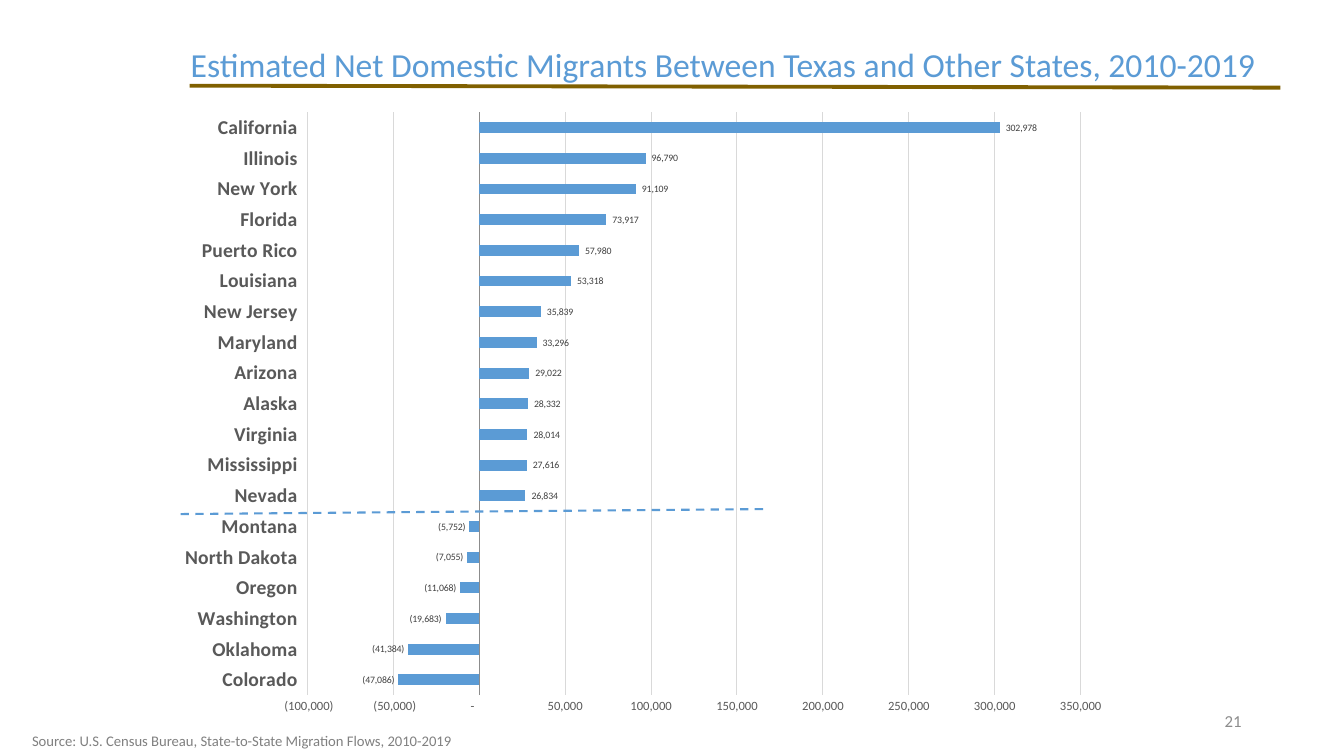
from lxml import etree
from pptx import Presentation
from pptx.chart.data import CategoryChartData
from pptx.dml.color import RGBColor
from pptx.enum.chart import (XL_CHART_TYPE, XL_LABEL_POSITION, XL_TICK_LABEL_POSITION,
                             XL_TICK_MARK)
from pptx.enum.dml import MSO_LINE
from pptx.enum.shapes import MSO_CONNECTOR
from pptx.enum.text import MSO_ANCHOR, MSO_AUTO_SIZE, PP_ALIGN
from pptx.oxml.ns import qn
from pptx.util import Pt

BAR = XL_CHART_TYPE.BAR_CLUSTERED
OUTSIDE_END = XL_LABEL_POSITION.OUTSIDE_END
LABELS_LOW = XL_TICK_LABEL_POSITION.LOW
NO_TICKS = XL_TICK_MARK.NONE
DASH = MSO_LINE.DASH
STRAIGHT = MSO_CONNECTOR.STRAIGHT
TOP, MIDDLE = MSO_ANCHOR.TOP, MSO_ANCHOR.MIDDLE
LEFT, RIGHT = PP_ALIGN.LEFT, PP_ALIGN.RIGHT

FONT = "Calibri"
COLORS = {
    "blue": "5B9BD5", "gold": "806000", "axis": "8C8C8C", "grid": "D9D9D9",
    "axis_text": "595959", "value_text": "404040", "source": "808080", "number": "8C8C8C",
}
NUMBER_FORMAT = '_(* #,##0_);_(* \\(#,##0\\);_(* "-"??_);_(@_)'
TITLE_ONLY = 5
# Inner plot area as shares of the chart frame
PLOT_LAYOUT = {"x": 0.147, "y": 0.02, "w": 0.81, "h": 0.93}
NET_MIGRANTS = {
    "Colorado": -47086, "Oklahoma": -41384, "Washington": -19683, "Oregon": -11068,
    "North Dakota": -7055, "Montana": -5752, "Nevada": 26834, "Mississippi": 27616,
    "Virginia": 28014, "Alaska": 28332, "Arizona": 29022, "Maryland": 33296,
    "New Jersey": 35839, "Louisiana": 53318, "Puerto Rico": 57980, "Florida": 73917,
    "New York": 91109, "Illinois": 96790, "California": 302978,
}


def rgb(name):
    return RGBColor.from_string(COLORS[name])


def style_font(font, size, color, bold=False):
    font.name = FONT
    font.size = Pt(size)
    font.bold = bold
    font.color.rgb = rgb(color)


def style_line(line, color, width):
    line.color.rgb = rgb(color)
    line.width = Pt(width)


def write_text(shape, text, size, color, align=LEFT, anchor=TOP):
    frame = shape.text_frame
    frame.word_wrap = True
    frame.auto_size = MSO_AUTO_SIZE.NONE
    frame.vertical_anchor = anchor
    paragraph = frame.paragraphs[0]
    paragraph.alignment = align
    run = paragraph.add_run()
    run.text = text
    style_font(run.font, size, color)
    return paragraph


def add_title(slide, text):
    title = slide.shapes.title
    title.left, title.top, title.width, title.height = Pt(129), Pt(30), Pt(780.5), Pt(35.5)
    write_text(title, text, 24, "blue", anchor=MIDDLE).line_spacing = 0.9


def add_text(slide, frame, *text_style, **options):
    box = slide.shapes.add_textbox(*map(Pt, frame))
    write_text(box, *text_style, **options)


def add_line(slide, start, end, color, width, dash=None):
    line = slide.shapes.add_connector(STRAIGHT, *map(Pt, start + end))
    style_line(line.line, color, width)
    if dash is not None:
        line.line.dash_style = dash
    etree.SubElement(line._element.spPr, qn("a:effectLst"))


def set_plot_layout(chart):
    """Fix the inner plot area, which python-pptx leaves automatic."""
    plot_area = chart._chartSpace.chart.plotArea
    layout = plot_area.find(qn("c:layout"))
    if layout is None:
        layout = etree.Element(qn("c:layout"))
        plot_area.insert(0, layout)
    manual = etree.SubElement(layout, qn("c:manualLayout"))
    settings = {"layoutTarget": "inner", "xMode": "edge", "yMode": "edge", **PLOT_LAYOUT}
    for tag, value in settings.items():
        etree.SubElement(manual, qn(f"c:{tag}")).set("val", str(value))


def style_axes(chart):
    states = chart.category_axis
    states.tick_label_position = LABELS_LOW
    states.major_tick_mark = NO_TICKS
    states.has_major_gridlines = False
    style_font(states.tick_labels.font, 14, "axis_text", bold=True)
    style_line(states.format.line, "axis", 0.75)

    migrants = chart.value_axis
    migrants.minimum_scale, migrants.maximum_scale = -100000, 350000
    migrants.major_unit = 50000
    migrants.major_tick_mark = NO_TICKS
    migrants.tick_labels.number_format = NUMBER_FORMAT
    migrants.tick_labels.number_format_is_linked = False
    style_font(migrants.tick_labels.font, 9, "axis_text")
    migrants.format.line.fill.background()
    style_line(migrants.major_gridlines.format.line, "grid", 0.75)


def style_bars(plot):
    plot.gap_width = 182
    plot.vary_by_categories = False
    series = plot.series[0]
    series.invert_if_negative = False
    series.format.fill.solid()
    series.format.fill.fore_color.rgb = rgb("blue")
    labels = series.data_labels
    labels.show_value = True
    labels.position = OUTSIDE_END
    labels.number_format = NUMBER_FORMAT
    labels.number_format_is_linked = False
    style_font(labels.font, 7, "value_text")


def add_migration_chart(slide):
    data = CategoryChartData(number_format=NUMBER_FORMAT)
    data.categories = list(NET_MIGRANTS)
    data.add_series("Series 1", list(NET_MIGRANTS.values()))
    frame = map(Pt, (119.5, 71.3, 681.8, 447.8))
    chart = slide.shapes.add_chart(BAR, *frame, data).chart
    chart.has_legend = False
    chart.has_title = False
    style_font(chart.font, 10, "axis_text")
    set_plot_layout(chart)
    style_axes(chart)
    style_bars(chart.plots[0])


def main():
    presentation = Presentation()
    presentation.slide_width, presentation.slide_height = Pt(960), Pt(540)
    slide = presentation.slides.add_slide(presentation.slide_layouts[TITLE_ONLY])
    add_line(slide, (135.5, 61.2), (914.5, 62.6), "gold", 2.75)
    add_text(slide, (678, 500.5, 216, 28.8), "21", 12, "number", align=RIGHT, anchor=MIDDLE)
    add_migration_chart(slide)
    add_title(slide, "Estimated Net Domestic Migrants Between Texas and Other States, 2010-2019")
    add_text(slide, (15.8, 519, 480, 21),
             "Source: U.S. Census Bureau, State-to-State Migration Flows, 2010-2019", 10.5, "source")
    add_line(slide, (129, 367.2), (548.6, 363.6), "blue", 1.5, DASH)
    presentation.save("out.pptx")


if __name__ == "__main__":
    main()
